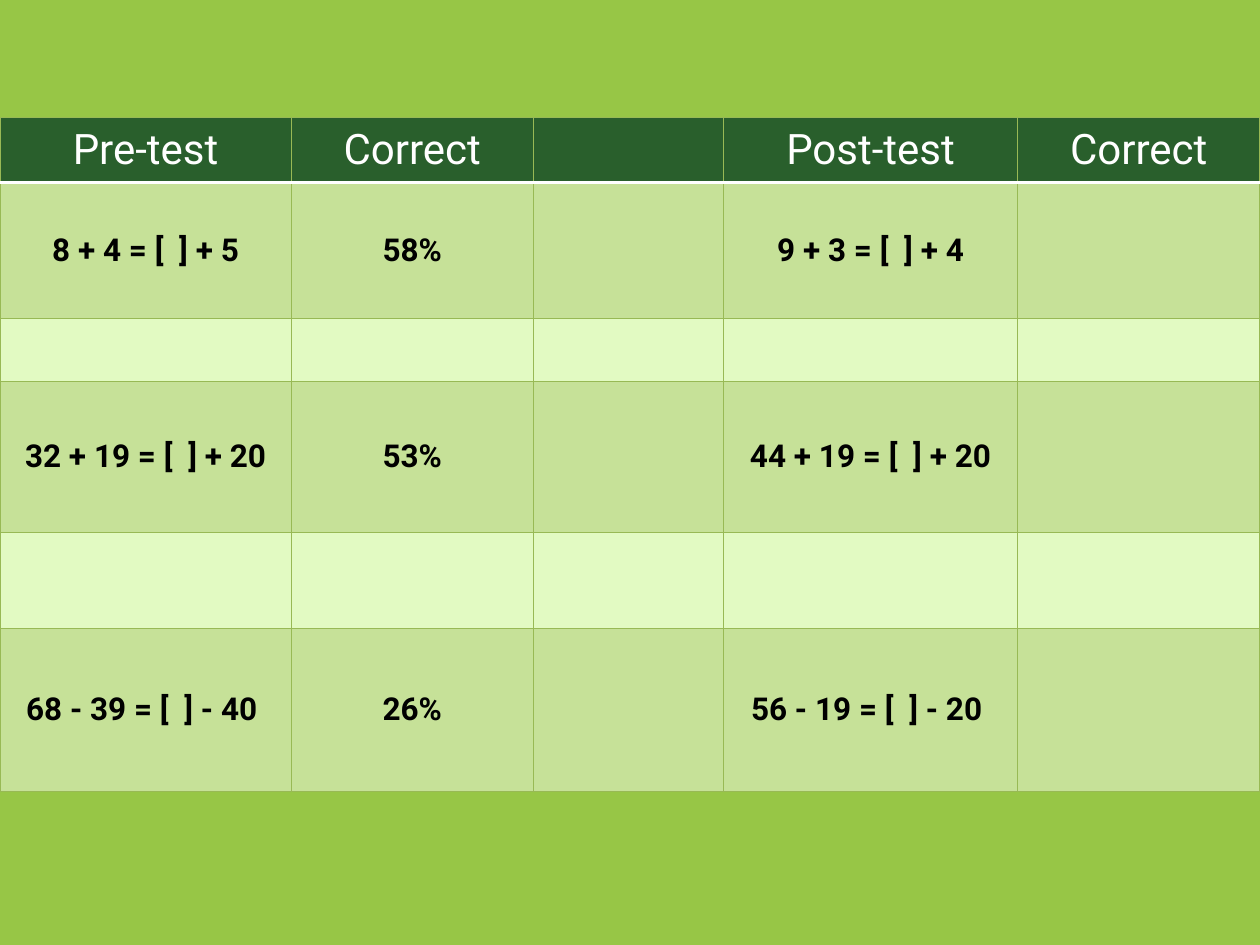
from lxml import etree
from pptx import Presentation
from pptx.dml.color import RGBColor
from pptx.enum.shapes import MSO_SHAPE
from pptx.enum.text import MSO_ANCHOR, PP_ALIGN
from pptx.oxml.ns import qn
from pptx.util import Pt

RECTANGLE = MSO_SHAPE.RECTANGLE
MIDDLE = MSO_ANCHOR.MIDDLE
CENTER = PP_ALIGN.CENTER

BACKDROP = "97C646"
HEADER = "295F2C"
QUESTION_ROW = "C6E198"
SPACER_ROW = "E2FAC2"
GRID = "98B955"
WHITE = "FFFFFF"
BLACK = "000000"

COLUMN_WIDTHS = [166.4, 138.4, 108.6, 168.2, 138.4]
ROW_HEIGHTS = [37.2, 77.7, 36, 86.3, 54.8, 93.1]
TABLE_TOP = 67
MARGIN = 4.5

BLANK_ROW = [""] * 5
ROWS = [
    ["Pre-test", "Correct", "", "Post-test", "Correct"],
    ["8 + 4 = [  ] + 5", "58%", "", "9 + 3 = [  ] + 4", ""],
    BLANK_ROW,
    ["32 + 19 = [  ] + 20", "53%", "", "44 + 19 = [  ] + 20", ""],
    BLANK_ROW,
    ["68 - 39 = [  ] - 40 ", "26%", "", "56 - 19 = [  ] - 20 ", ""],
]


def paint(fill, color):
    fill.solid()
    fill.fore_color.rgb = RGBColor.from_string(color)


def format_cell(cell, text, fill, size, color, bold, borders):
    """Fill one cell; borders maps a side (L, R, T, B) to its colour and width."""
    properties = cell._tc.get_or_add_tcPr()
    for side, (line_color, width) in borders.items():
        line = etree.SubElement(properties, qn(f"a:ln{side}"), w=str(Pt(width)))
        solid = etree.SubElement(line, qn("a:solidFill"))
        etree.SubElement(solid, qn("a:srgbClr"), val=line_color)
    paint(cell.fill, fill)
    cell.vertical_anchor = MIDDLE
    cell.margin_left = cell.margin_right = Pt(MARGIN)
    cell.margin_top = cell.margin_bottom = Pt(MARGIN)
    if text:
        para = cell.text_frame.paragraphs[0]
        para.alignment = CENTER
        span = para.add_run()
        span.text = text
        span.font.name = "Roboto"
        span.font.size = Pt(size)
        span.font.bold = bold
        span.font.color.rgb = RGBColor.from_string(color)


deck = Presentation()
deck.slide_width, deck.slide_height = Pt(720), Pt(540)
page = deck.slides.add_slide(deck.slide_layouts[6])

backdrop = page.shapes.add_shape(RECTANGLE, 0, 0, Pt(720), Pt(540))
backdrop.shadow.inherit = False
backdrop.line.fill.background()
paint(backdrop.fill, BACKDROP)

table = page.shapes.add_table(
    len(ROWS), len(COLUMN_WIDTHS), 0, Pt(TABLE_TOP),
    Pt(sum(COLUMN_WIDTHS)), Pt(sum(ROW_HEIGHTS)),
).table
table.horz_banding = False
for column, width in zip(table.columns, COLUMN_WIDTHS):
    column.width = Pt(width)
for row, height in zip(table.rows, ROW_HEIGHTS):
    row.height = Pt(height)

for row_index, texts in enumerate(ROWS):
    borders = {side: (GRID, 0.75) for side in "LRTB"}
    if row_index == 0:
        fill, size, color, bold = HEADER, 24, WHITE, False
        borders["B"] = (WHITE, 2)
    else:
        fill = QUESTION_ROW if row_index % 2 else SPACER_ROW
        size, color, bold = 18, BLACK, True
        if row_index == 1:
            borders["T"] = (WHITE, 2)
    for column_index, text in enumerate(texts):
        cell = table.cell(row_index, column_index)
        format_cell(cell, text, fill, size, color, bold, borders)

deck.save("out.pptx")
